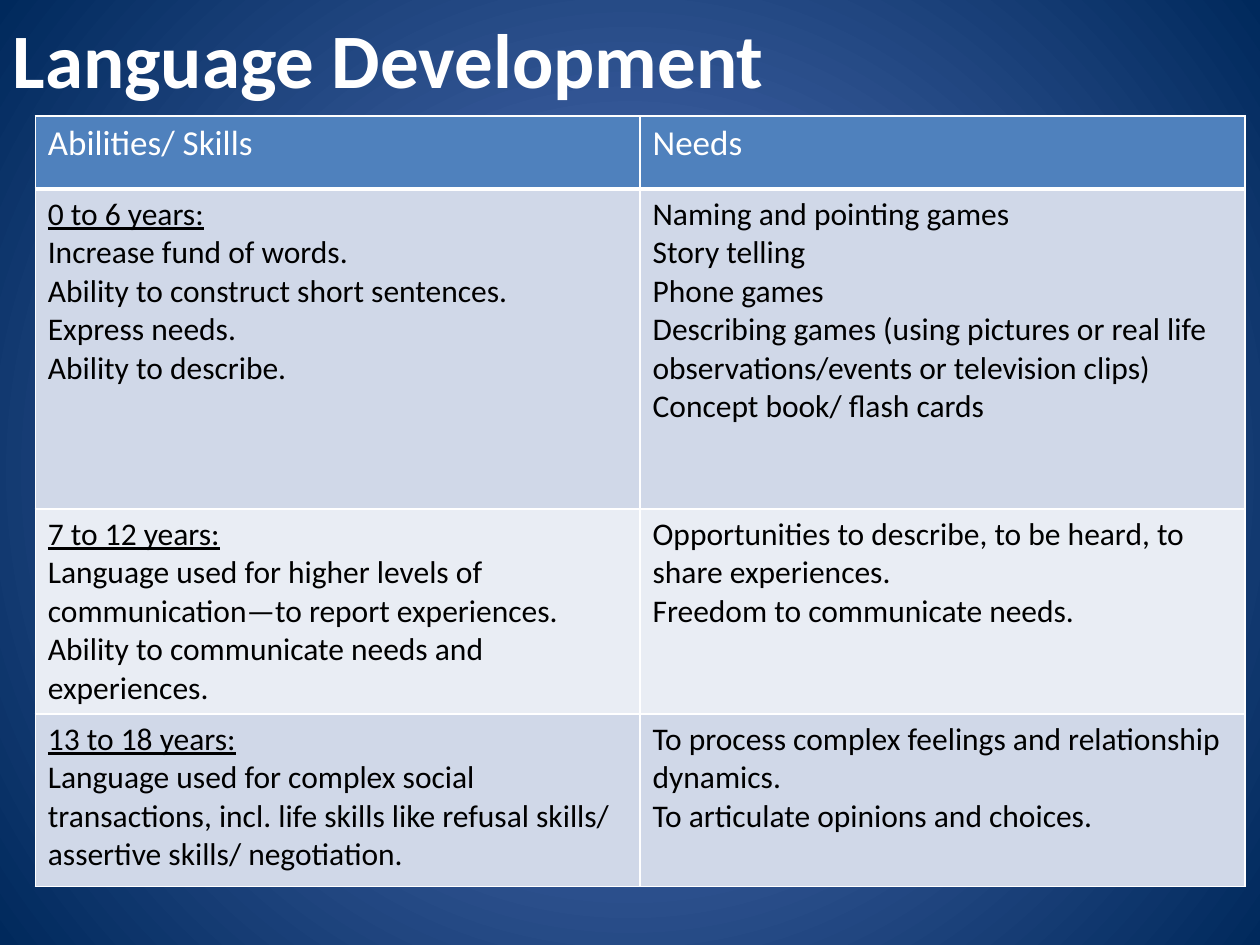
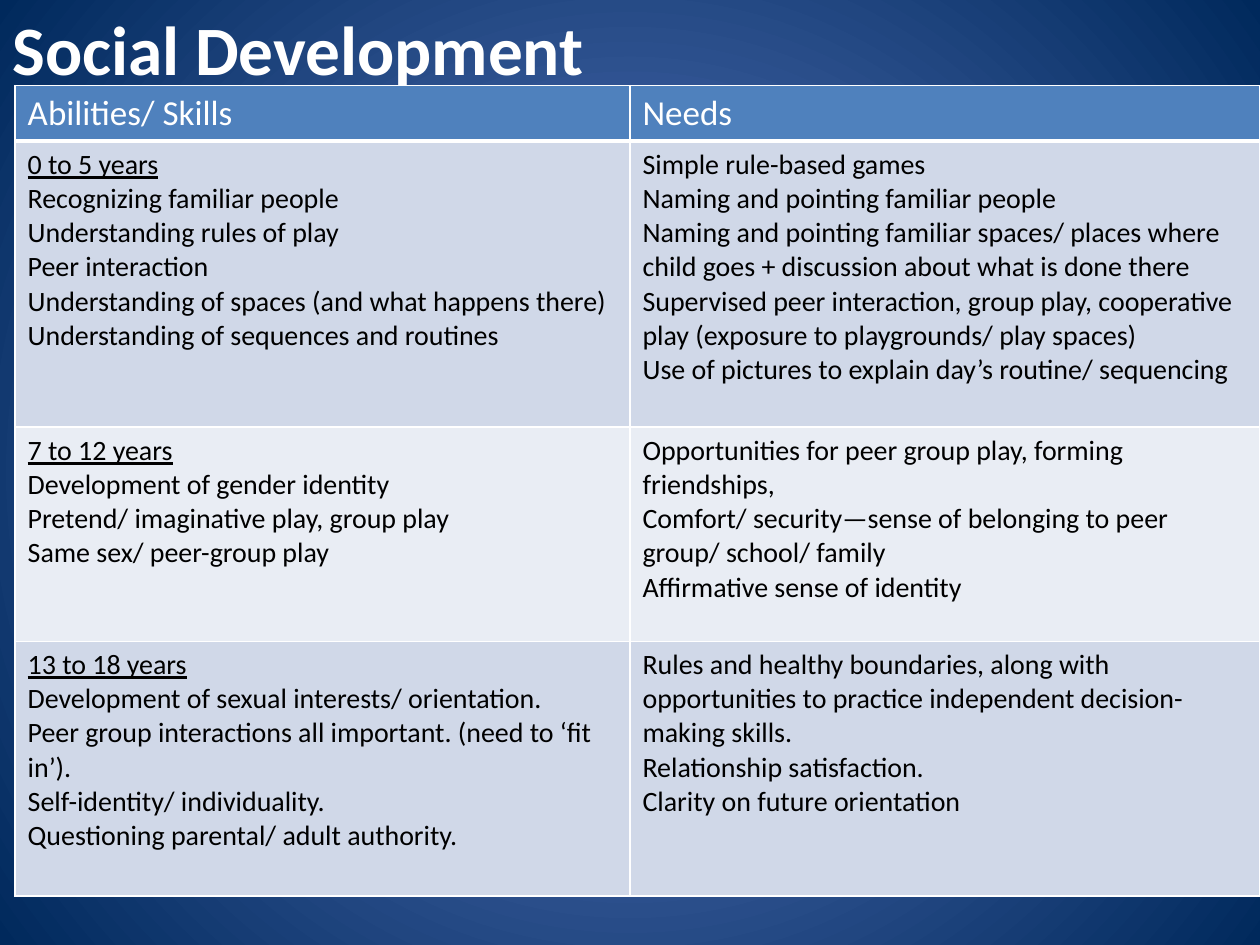
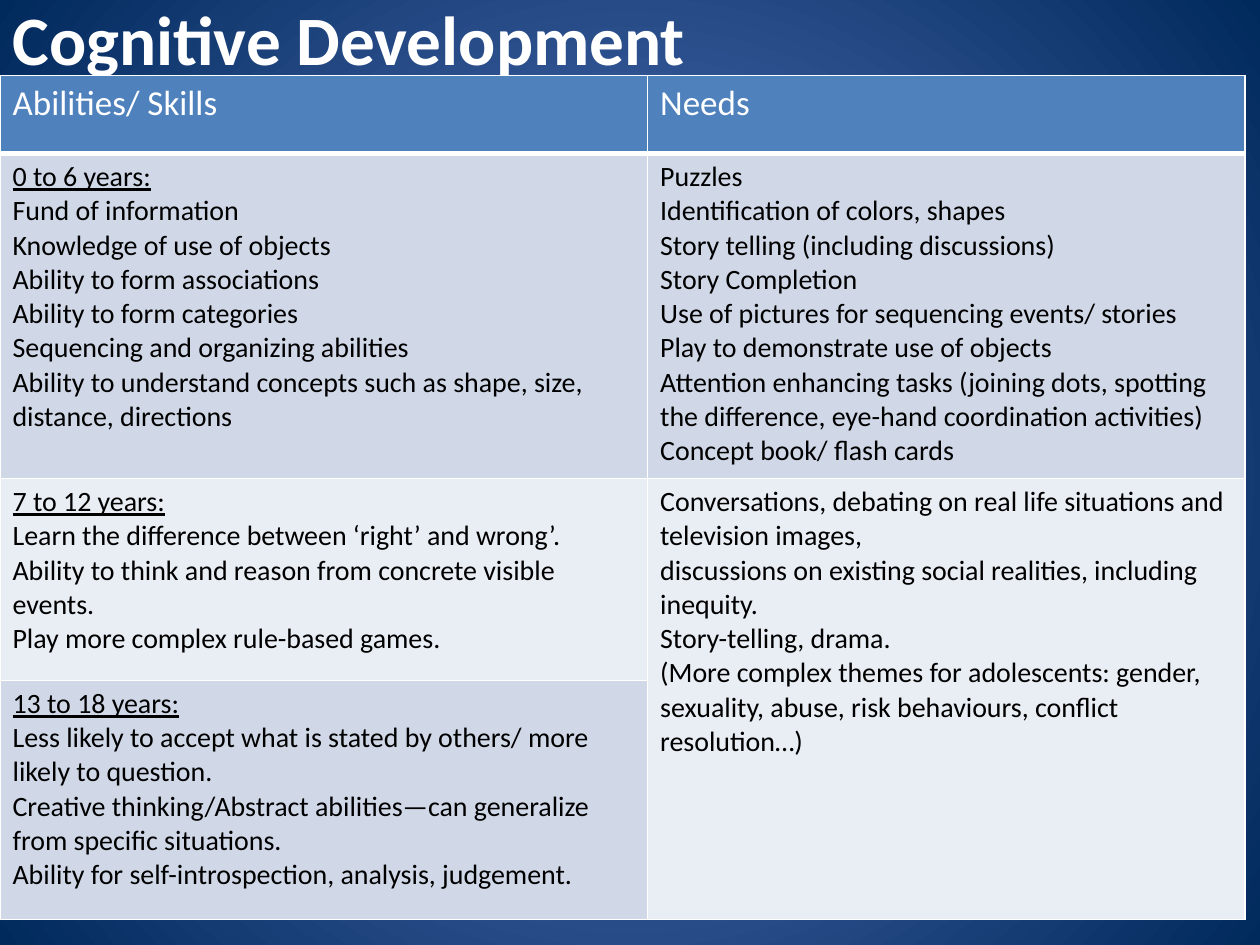
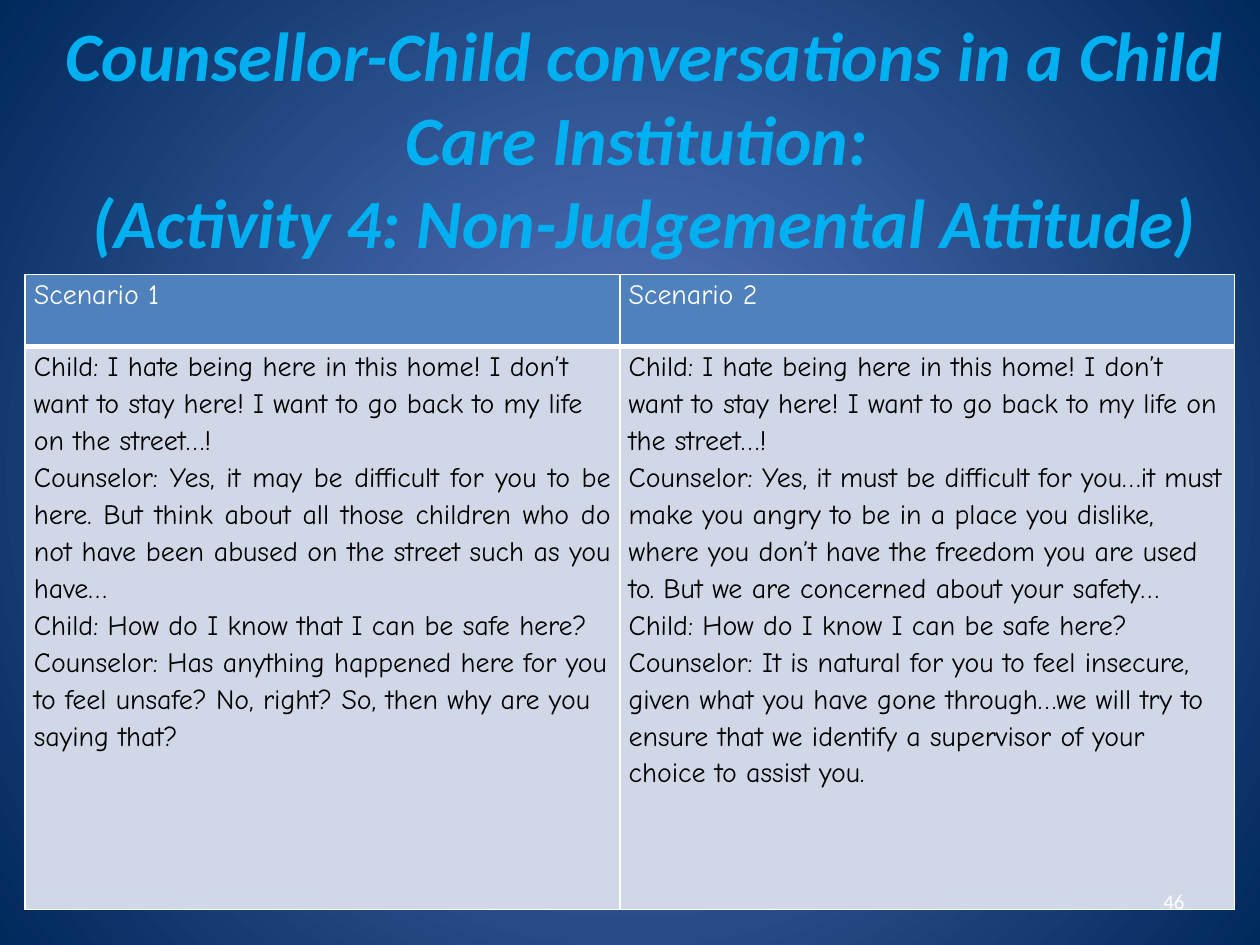
import pptx
import pptx.util
import pptx.dml.color
import pptx.enum.text
from lxml import etree

Inches, Pt = pptx.util.Inches, pptx.util.Pt
ALIGN = pptx.enum.text.PP_ALIGN
ANCHOR = pptx.enum.text.MSO_ANCHOR
COLOURS = {
    "glow": "5E7CC5", "edge": "00295C", "white": "FFFFFF", "black": "000000",
    "accent": "00B0F0", "header": "4F81BD", "odd": "D0D8E8", "even": "E9EDF4",
}
DRAWING = "http://schemas.openxmlformats.org/drawingml/2006/main"
TITLE_FONT = {"name": "Calibri", "bold": True}
HEADINGS = (["Abilities/ Skills"], ["Needs"])

LANGUAGE = [
    HEADINGS,
    (["0 to 6 years:", "Increase fund of words.", "Ability to construct short sentences.",
      "Express needs.", "Ability to describe."],
     ["Naming and pointing games", "Story telling", "Phone games",
      "Describing games (using pictures or real life observations/events or television clips)",
      "Concept book/ flash cards"]),
    (["7 to 12 years:",
      "Language used for higher levels of communication—to report experiences.",
      "Ability to communicate needs and experiences."],
     ["Opportunities to describe, to be heard, to share experiences.",
      "Freedom to communicate needs."]),
    (["13 to 18 years:",
      "Language used for complex social transactions, incl. life skills like refusal skills/ "
      "assertive skills/ negotiation."],
     ["To process complex feelings and relationship dynamics.",
      "To articulate opinions and choices."]),
]
SOCIAL = [
    HEADINGS,
    (["0 to 5 years", "Recognizing familiar people", "Understanding rules of play",
      "Peer interaction", "Understanding of spaces (and what happens there)",
      "Understanding of sequences and routines"],
     ["Simple rule-based games", "Naming and pointing familiar people",
      "Naming and pointing familiar spaces/ places where child goes + discussion about what "
      "is done there",
      "Supervised peer interaction, group play, cooperative play (exposure to playgrounds/ "
      "play spaces)",
      "Use of pictures to explain day’s routine/ sequencing"]),
    (["7 to 12 years", "Development of gender identity",
      "Pretend/ imaginative play, group play", "Same sex/ peer-group play"],
     ["Opportunities for peer group play, forming friendships,",
      "Comfort/ security—sense of belonging to peer group/ school/ family",
      "Affirmative sense of identity"]),
    (["13 to 18 years", "Development of sexual interests/ orientation.",
      "Peer group interactions all important. (need to ‘fit in’).",
      "Self-identity/ individuality.", "Questioning parental/ adult authority."],
     ["Rules and healthy boundaries, along with opportunities to practice independent "
      "decision-making skills.",
      "Relationship satisfaction.", "Clarity on future orientation"]),
]
# None marks a cell that is merged into the one above it.
COGNITIVE = [
    HEADINGS,
    (["0 to 6 years:", "Fund of information", "Knowledge of use of objects",
      "Ability to form associations", "Ability to form categories",
      "Sequencing and organizing abilities",
      "Ability to understand concepts such as shape, size, distance, directions"],
     ["Puzzles", "Identification of colors, shapes", "Story telling (including discussions)",
      "Story Completion", "Use of pictures for sequencing events/ stories",
      "Play to demonstrate use of objects",
      "Attention enhancing tasks (joining dots, spotting the difference, eye-hand "
      "coordination activities)",
      "Concept book/ flash cards"]),
    (["7 to 12 years:", "Learn the difference between ‘right’ and wrong’.",
      "Ability to think and reason from concrete visible events.",
      "Play more complex rule-based games."],
     ["Conversations, debating on real life situations and television images,",
      "discussions on existing social realities, including inequity.",
      "Story-telling, drama.",
      "(More complex themes for adolescents: gender, sexuality, abuse, risk behaviours, "
      "conflict resolution…)"]),
    (["13 to 18 years:",
      "Less likely to accept what is stated by others/ more likely to question.",
      "Creative thinking/Abstract abilities—can generalize from specific situations.",
      "Ability for self-introspection, analysis, judgement."],
     None),
]
COMPLAINT = ("Child: I hate being here in this home! I don’t want to stay here! "
             "I want to go back to my life on the street…!")
SCENARIOS = [
    (["Scenario 1"], ["Scenario 2"]),
    ([COMPLAINT,
      "Counselor: Yes, it may be difficult for you to be here. But think about all those "
      "children who do not have been abused on the street such as you have…",
      "Child: How do I know that I can be safe here? ",
      "Counselor: Has anything happened here for you to feel unsafe? No, right? So, then why "
      "are you saying that?"],
     [COMPLAINT,
      "Counselor: Yes, it must be difficult for you…it must make you angry to be in a place "
      "you dislike, where you don’t have the freedom you are used to. But we are concerned "
      "about your safety…",
      "Child: How do I know I can be safe here?",
      "Counselor: It is natural for you to feel insecure, given what you have gone "
      "through…we will try to ensure that we identify a supervisor of your choice to "
      "assist you."]),
]
JUSTIFIED = {(0, 0, 0), (0, 1, 0), (1, 0, 1), (1, 0, 2)}  # row, column, paragraph


def rgb(name):
    return pptx.dml.color.RGBColor.from_string(COLOURS[name])


def format_font(font, colour, size, **values):
    font.color.rgb = rgb(colour)
    font.size = Pt(size)
    for name, value in values.items():
        setattr(font, name, value)


def set_background(master):
    """Give every slide a radial glow from the centre."""
    fill = master.background.fill
    fill.gradient()
    for stop, name in zip(fill.gradient_stops, ("glow", "edge")):
        stop.color.rgb = rgb(name)
    gradient = master.element.find(".//{%s}gradFill" % DRAWING)
    gradient.remove(gradient.find("{%s}lin" % DRAWING))
    circle = etree.SubElement(gradient, "{%s}path" % DRAWING, path="circle")
    sides = dict.fromkeys("ltrb", "50000")
    etree.SubElement(circle, "{%s}fillToRect" % DRAWING, sides)


def add_page(deck, box, lines, colour="white", size=39.6, align=ALIGN.LEFT, **values):
    """Add a title-only slide with its title in the box, in inches."""
    page = deck.slides.add_slide(deck.slide_layouts.get_by_name("Title Only"))
    title = page.shapes.title
    title.left, title.top, title.width, title.height = map(Inches, box)
    frame = title.text_frame
    frame.auto_size = pptx.enum.text.MSO_AUTO_SIZE.NONE
    frame.vertical_anchor = ANCHOR.MIDDLE
    para = frame.paragraphs[0]
    para.alignment = align
    for index, line in enumerate(lines):
        if index:
            para.add_line_break()
        span = para.add_run()
        span.text = line
        format_font(span.font, colour, size, **TITLE_FONT, **values)
    return page


def set_borders(cell, bottom):
    properties = cell._tc.get_or_add_tcPr()
    widths = {"lnL": 1, "lnR": 1, "lnT": 1, "lnB": bottom}
    for position, (tag, width) in enumerate(widths.items()):
        line = etree.Element("{%s}%s" % (DRAWING, tag), w=str(Pt(width)))
        solid = etree.SubElement(line, "{%s}solidFill" % DRAWING)
        etree.SubElement(solid, "{%s}srgbClr" % DRAWING, val=COLOURS["white"])
        properties.insert(position, line)


def add_grid(page, corner, columns, heights, rows, size, heading_size=20,
             font="Calibri", ages=True, justified=(), spacing=None, insets=None):
    """Add a two-column table; with ages, the first line of each body row is underlined."""
    left, top = corner
    table = page.shapes.add_table(
        len(heights), len(columns), Inches(left), Inches(top),
        Inches(sum(columns)), Inches(sum(heights))).table
    for column, width in zip(table.columns, columns):
        column.width = Inches(width)
    for row, height in zip(table.rows, heights):
        row.height = Inches(height)
    for row, contents in enumerate(rows):
        heading = row == 0
        fill = "header" if heading else ("even", "odd")[row % 2]
        for column, lines in enumerate(contents):
            cell = table.cell(row, column)
            cell.fill.solid()
            cell.fill.fore_color.rgb = rgb(fill)
            set_borders(cell, 3 if heading else 1)
            for name, value in (insets or {}).items():
                setattr(cell, name, Inches(value))
            if lines is None:
                table.cell(row - 1, column).merge(cell)
                continue
            for index, line in enumerate(lines):
                frame = cell.text_frame
                para = frame.add_paragraph() if index else frame.paragraphs[0]
                para.line_spacing = spacing
                para.alignment = (ALIGN.JUSTIFY if (row, column, index) in justified
                                  else ALIGN.LEFT)
                span = para.add_run()
                span.text = line
                is_age = ages and not heading and column == index == 0
                format_font(span.font, "white" if heading else "black",
                            heading_size if heading else size,
                            name=font, bold=False, underline=is_age)


def add_page_number(page, box, number):
    frame = page.shapes.add_textbox(*map(Inches, box)).text_frame
    frame.word_wrap = True
    frame.vertical_anchor = ANCHOR.MIDDLE
    para = frame.paragraphs[0]
    para.alignment = ALIGN.RIGHT
    span = para.add_run()
    span.text = number
    format_font(span.font, "white", 12, name="Calibri")


def main():
    deck = pptx.Presentation()
    deck.slide_width, deck.slide_height = Inches(10), Inches(7.5)
    set_background(deck.slide_master)

    page = add_page(deck, (0, 0, 9, 0.92), ["Language Development"], size=44)
    add_grid(page, (0.28, 0.92), (4.8, 4.8), (0.58, 2.54, 1.62, 1.37), LANGUAGE, 18)

    page = add_page(deck, (0, 0, 10, 0.76), ["Social Development"])
    add_grid(page, (0.12, 0.68), (4.88, 5), (0.44, 2.27, 1.7, 2.02), SOCIAL, 16)

    page = add_page(deck, (0, 0, 9, 0.6), ["Cognitive Development"])
    add_grid(page, (0, 0.6), (5.14, 4.74), (0.62, 2.58, 1.6, 1.9), COGNITIVE, 16)

    page = add_page(
        deck, (0.23, 0, 9.77, 2.18),
        ["Counsellor-Child conversations in a Child Care Institution: ",
         "(Activity 4: Non-Judgemental Attitude)"],
        colour="accent", align=ALIGN.CENTER, italic=True)
    add_grid(page, (0.2, 2.18), (4.72, 4.88), (0.57, 4.47), SCENARIOS, 16,
             heading_size=16, font="Comic Neue", ages=False, justified=JUSTIFIED, spacing=1.15,
             insets={"margin_left": 0.07, "margin_right": 0.07,
                     "margin_top": 0, "margin_bottom": 0})
    add_page_number(page, (7.17, 6.95, 2.33, 0.4), "46")

    deck.save("out.pptx")


if __name__ == "__main__":
    main()
